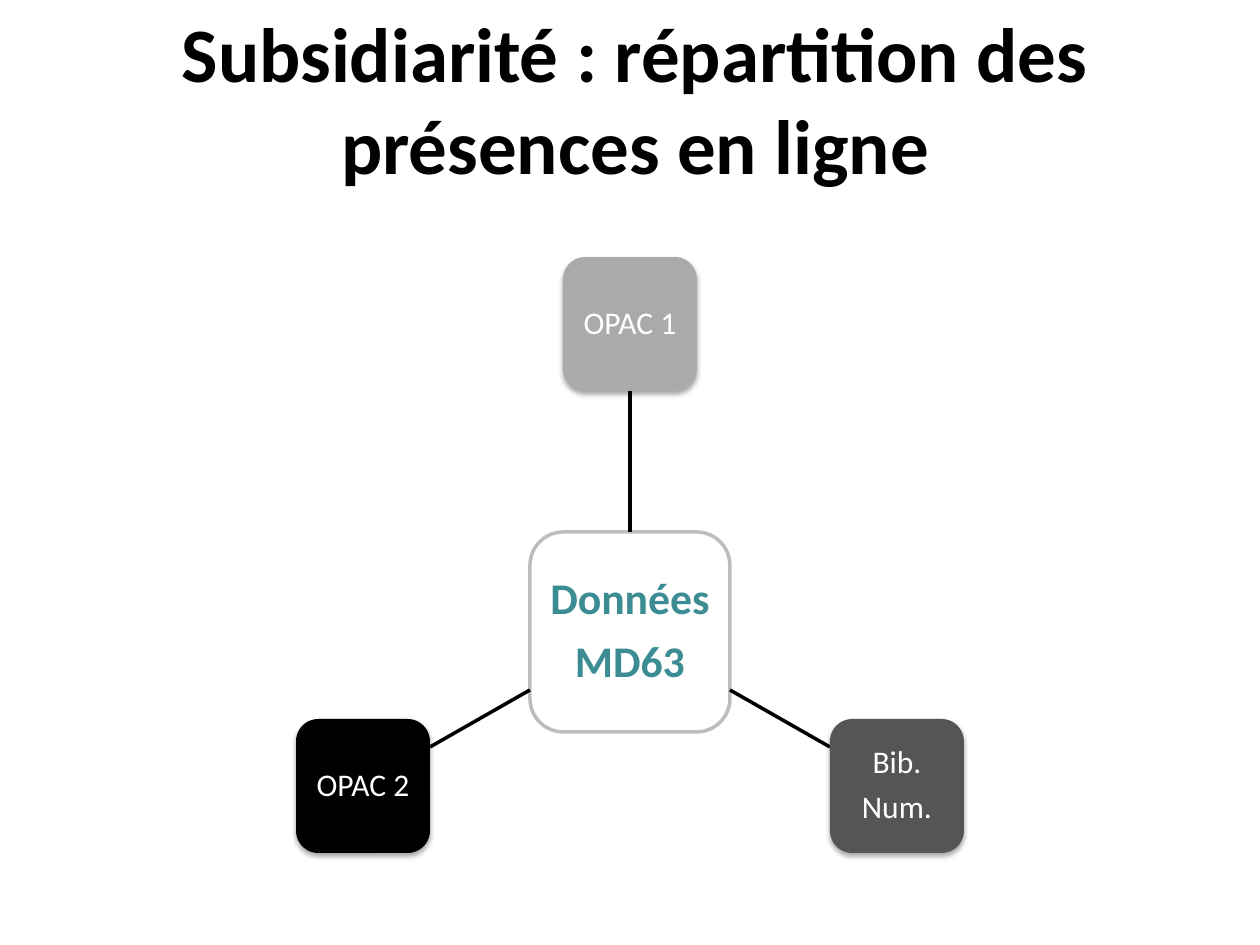
from math import cos, radians, sin

from lxml import etree
from pptx import Presentation
from pptx.dml.color import RGBColor
from pptx.enum.shapes import MSO_CONNECTOR, MSO_SHAPE
from pptx.enum.text import MSO_ANCHOR, PP_ALIGN
from pptx.oxml.ns import qn
from pptx.util import Emu, Pt

PX = 914400 // 126
ROUND = MSO_SHAPE.ROUNDED_RECTANGLE
LINE = MSO_CONNECTOR.STRAIGHT
MIDDLE = MSO_ANCHOR.MIDDLE
CENTER = PP_ALIGN.CENTER
FONT = "Calibri"
INK = {"black": "000000", "white": "FFFFFF", "teal": "3C8C93",
       "rim": "BDBDBD", "light": "AAAAAA", "dark": "555555"}


def color(name):
    return RGBColor.from_string(INK[name])


def add_node(x, y, side, text, fill, ink, size):
    node = slide.shapes.add_shape(
        ROUND, *[Emu(round(v) * PX) for v in (x - side / 2, y - side / 2, side, side)])
    node.shadow.inherit = False
    node.fill.solid()
    node.fill.fore_color.rgb = color(fill)
    node.line.fill.background()
    frame = node.text_frame
    frame.word_wrap = True
    frame.vertical_anchor = MIDDLE
    frame.margin_left = frame.margin_right = Emu(5 * PX)
    frame.margin_top = frame.margin_bottom = Emu(5 * PX)
    frame.text = text
    for para in frame.paragraphs:
        para.alignment = CENTER
        para.line_spacing = 0.9
        para.space_after = Pt(round(size * 0.35, 1))
        font = para.runs[0].font
        font.name, font.size = FONT, Pt(size)
        font.color.rgb = color(ink)
    return node


deck = Presentation()
deck.slide_width, deck.slide_height = Emu(1260 * PX), Emu(945 * PX)
slide = deck.slides.add_slide(deck.slide_layouts[5])

# Title
title = slide.shapes.title
title.left, title.top = Emu(63 * PX), Emu(0)
title.width, title.height = Emu(1134 * PX), Emu(195 * PX)
frame = title.text_frame
frame.text = "Subsidiarité : répartition des présences en ligne"
frame.word_wrap = True
frame.vertical_anchor = MIDDLE
para = frame.paragraphs[0]
para.alignment = CENTER
para._p.get_or_add_pPr().set("marL", str(11 * PX))
font = para.runs[0].font
font.name, font.size, font.bold = FONT, Pt(44), True
font.color.rgb = color("black")

# Hub in the middle
MID_X, MID_Y, RADIUS = 630, 632, 308
HUB, BOX = 200, 134
hub = add_node(MID_X, MID_Y, HUB, "Données\nMD63", "white", "teal", 25)
hub.line.color.rgb = color("rim")
hub.line.width = Pt(2)
for para in hub.text_frame.paragraphs:
    para.runs[0].font.bold = True

# Outer boxes a third of a turn apart, each with a spoke to the hub
nodes = [("OPAC 1", "light"), ("Bib.\nNum.", "dark"), ("OPAC 2", "black")]
for i, (text, fill) in enumerate(nodes):
    turn = radians(120 * i - 90)
    dx, dy = cos(turn), sin(turn)
    reach = max(abs(dx), abs(dy))
    ends = []
    for dist in (HUB / 2 / reach, RADIUS - BOX / 2 / reach):
        ends += [Emu(round(MID_X + dist * dx) * PX), Emu(round(MID_Y + dist * dy) * PX)]
    spoke = slide.shapes.add_connector(LINE, *ends)
    spoke.line.color.rgb = color("black")
    spoke.line.width = Pt(2)
    etree.SubElement(spoke._element.spPr, qn("a:effectLst"))

    box = add_node(MID_X + RADIUS * dx, MID_Y + RADIUS * dy, BOX,
                   text, fill, "white", 18)
    # Soft shadow below the box
    glow = etree.SubElement(
        box._element.spPr.find(qn("a:effectLst")), qn("a:outerShdw"),
        blurRad=str(Pt(3.1)), dist=str(Pt(1.8)), dir="5400000", rotWithShape="0")
    tone = etree.SubElement(glow, qn("a:srgbClr"), val=INK["black"])
    etree.SubElement(tone, qn("a:alpha"), val="35000")

deck.save("out.pptx")
